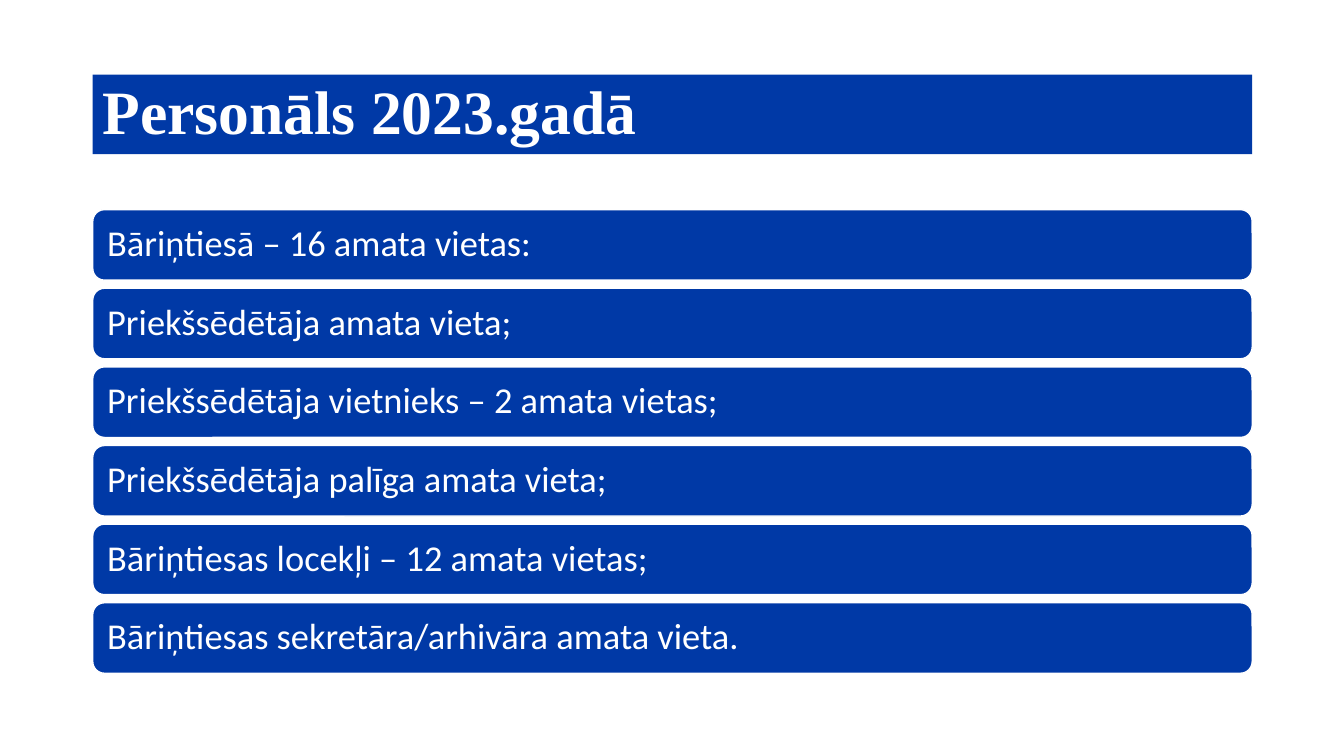
from pptx import Presentation
from pptx.dml.color import RGBColor
from pptx.enum.shapes import MSO_SHAPE
from pptx.enum.text import MSO_ANCHOR, PP_ALIGN
from pptx.util import Pt

PX = 9144  # 100 px to the inch
RECT, ROUND = MSO_SHAPE.RECTANGLE, MSO_SHAPE.ROUNDED_RECTANGLE
MIDDLE, LEFT = MSO_ANCHOR.MIDDLE, PP_ALIGN.LEFT
COLORS = {"blue": "0039A6", "white": "FFFFFF"}
RGB = {name: RGBColor.from_string(code) for name, code in COLORS.items()}
EDGE, WIDTH = 92, 1150


def add_bar(kind, top, height, text, inset, font):
    bar = slide.shapes.add_shape(kind, EDGE * PX, top * PX, WIDTH * PX, height * PX)
    bar.shadow.inherit = False
    bar.fill.solid()
    bar.fill.fore_color.rgb = RGB["blue"]
    frame = bar.text_frame
    format = {"word_wrap": True, "vertical_anchor": MIDDLE,
              "margin_left": inset * PX, "margin_right": inset * PX}
    for key, value in format.items():
        setattr(frame, key, value)
    line = frame.paragraphs[0]
    line.alignment = LEFT
    line.line_spacing = 0.9
    run = line.add_run()
    run.text = text
    for key, value in font.items():
        setattr(run.font, key, value)
    run.font.color.rgb = RGB["white"]
    return bar


deck = Presentation()
deck.slide_width, deck.slide_height = 1333 * PX, 750 * PX
slide = deck.slides.add_slide(deck.slide_layouts[6])

# Title band
title = add_bar(RECT, 74, 79, "Personāls 2023.gadā", 10,
                {"name": "Times New Roman", "size": Pt(44), "bold": True})
title.line.fill.background()

# Staff list
STAFF = [
    "Bāriņtiesā – 16 amata vietas:",
    "Priekšsēdētāja amata vieta;",
    "Priekšsēdētāja vietnieks – 2 amata vietas;",
    "Priekšsēdētāja palīga amata vieta;",
    "Bāriņtiesas locekļi – 12 amata vietas;",
    "Bāriņtiesas sekretāra/arhivāra amata vieta.",
]
TOP, HEIGHT, STEP = 208, 70, 78
for row, text in enumerate(STAFF):
    bar = add_bar(ROUND, TOP + row * STEP, HEIGHT, text, 11,
                  {"name": "Calibri", "size": Pt(26)})
    bar.line.color.rgb = RGB["white"]
    bar.line.width = Pt(1)

deck.save("out.pptx")
